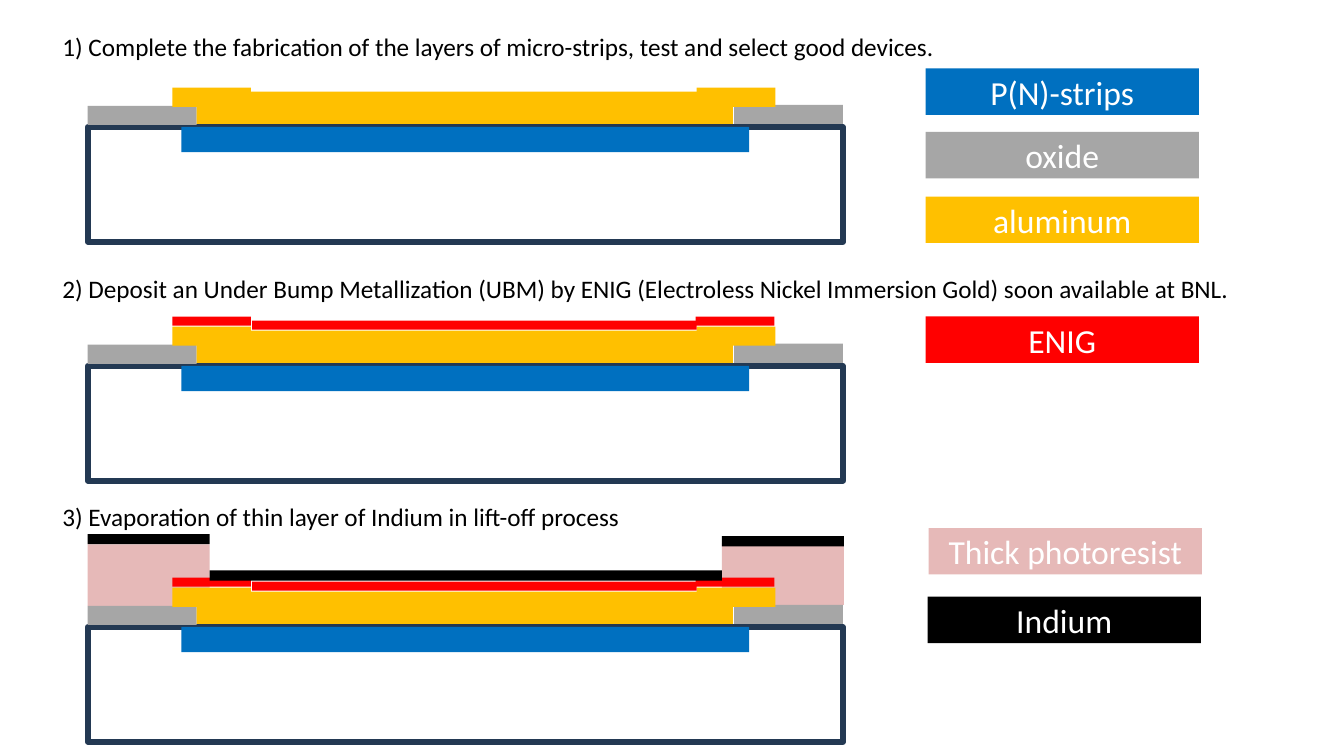
from pptx import Presentation
from pptx.dml.color import RGBColor
from pptx.enum import shapes, text
from pptx.util import Inches, Pt

BLUE = RGBColor(0x00, 0x70, 0xC0)
GRAY = RGBColor(0xA6, 0xA6, 0xA6)
GOLD = RGBColor(0xFF, 0xC0, 0x00)
RED = RGBColor(0xFF, 0x00, 0x00)
PINK = RGBColor(0xE6, 0xB9, 0xB8)
BLACK = RGBColor(0x00, 0x00, 0x00)
WHITE = RGBColor(0xFF, 0xFF, 0xFF)
NAVY = RGBColor(0x23, 0x39, 0x53)

# Layers: (left, rise of the top edge above the substrate, width, height, colour)
RESIST = [(0.87, 0.82, 1.21, 0.61, PINK), (7.16, 0.83, 1.21, 0.61, PINK)]
DEVICE = [
    (1.8, 0, 5.63, 0.25, BLUE),
    (0.87, 0.21, 1.08, 0.19, GRAY),
    (7.28, 0.22, 1.08, 0.19, GRAY),
    (1.95, 0.35, 5.32, 0.32, GOLD),
    (1.71, 0.39, 0.78, 0.19, GOLD),
    (6.91, 0.39, 0.78, 0.19, GOLD),
]
ENIG = [
    (1.71, 0.49, 0.78, 0.09, RED),
    (6.9, 0.49, 0.78, 0.09, RED),
    (2.5, 0.45, 4.41, 0.09, RED),
]
INDIUM = [
    (0.87, 0.92, 1.21, 0.1, BLACK),
    (2.08, 0.56, 5.08, 0.1, BLACK),
    (7.16, 0.9, 1.21, 0.1, BLACK),
]

# Steps: (caption, caption top, caption width, substrate top, layers back to front)
STEPS = [
    ("1) Complete the fabrication of the layers of micro-strips, test and select good devices.",
     0.26, 8.95, 1.26, DEVICE),
    ("2) Deposit an Under Bump Metallization (UBM) by ENIG (Electroless Nickel Immersion Gold) "
     "soon available at BNL.",
     2.66, 11.79, 3.63, DEVICE + ENIG),
    ("3) Evaporation of thin layer of Indium in lift-off process",
     4.92, 5.81, 6.22, RESIST + DEVICE + ENIG + INDIUM),
]
LEGEND = [
    ("P(N)-strips", 9.18, 0.68, BLUE),
    ("oxide", 9.18, 1.31, GRAY),
    ("aluminum", 9.18, 1.95, GOLD),
    ("ENIG", 9.18, 3.14, RED),
    ("Thick photoresist", 9.21, 5.24, PINK),
    ("Indium", 9.2, 5.92, BLACK),
]


def add_block(page, left, top, width, height, fill=None):
    """Add a rectangle: filled without outline, or hollow with the substrate outline."""
    block = page.shapes.add_shape(
        shapes.MSO_SHAPE.RECTANGLE, *map(Inches, (left, top, width, height)))
    block.shadow.inherit = False
    if fill is None:
        block.fill.background()
        block.line.color.rgb = NAVY
        block.line.width = Pt(4)
    else:
        block.fill.solid()
        block.fill.fore_color.rgb = fill
        block.line.fill.background()
    return block


def write(box, words, size, color, align, **frame_format):
    frame = box.text_frame
    for name, value in frame_format.items():
        setattr(frame, name, value)
    para = frame.paragraphs[0]
    para.alignment = align
    span = para.add_run()
    span.text = words
    for name, value in {"name": "Calibri", "size": Pt(size)}.items():
        setattr(span.font, name, value)
    span.font.color.rgb = color


def main():
    deck = Presentation()
    deck.slide_width, deck.slide_height = Inches(13.33), Inches(7.5)
    page = deck.slides.add_slide(deck.slide_layouts[6])

    for caption, caption_top, caption_width, base, layers in STEPS:
        add_block(page, 0.87, base, 7.49, 1.14)
        for left, rise, width, height, color in layers:
            add_block(page, left, base - rise, width, height, color)
        box = page.shapes.add_textbox(
            *map(Inches, (0.52, caption_top, caption_width, 0.4)))
        write(box, caption, 18, BLACK, text.PP_ALIGN.LEFT, word_wrap=False,
              auto_size=text.MSO_AUTO_SIZE.SHAPE_TO_FIT_TEXT)

    for label, left, top, color in LEGEND:
        box = add_block(page, left, top, 2.71, 0.46, color)
        write(box, label, 24, WHITE, text.PP_ALIGN.CENTER, word_wrap=True,
              vertical_anchor=text.MSO_ANCHOR.MIDDLE)

    deck.save("out.pptx")


if __name__ == "__main__":
    main()
